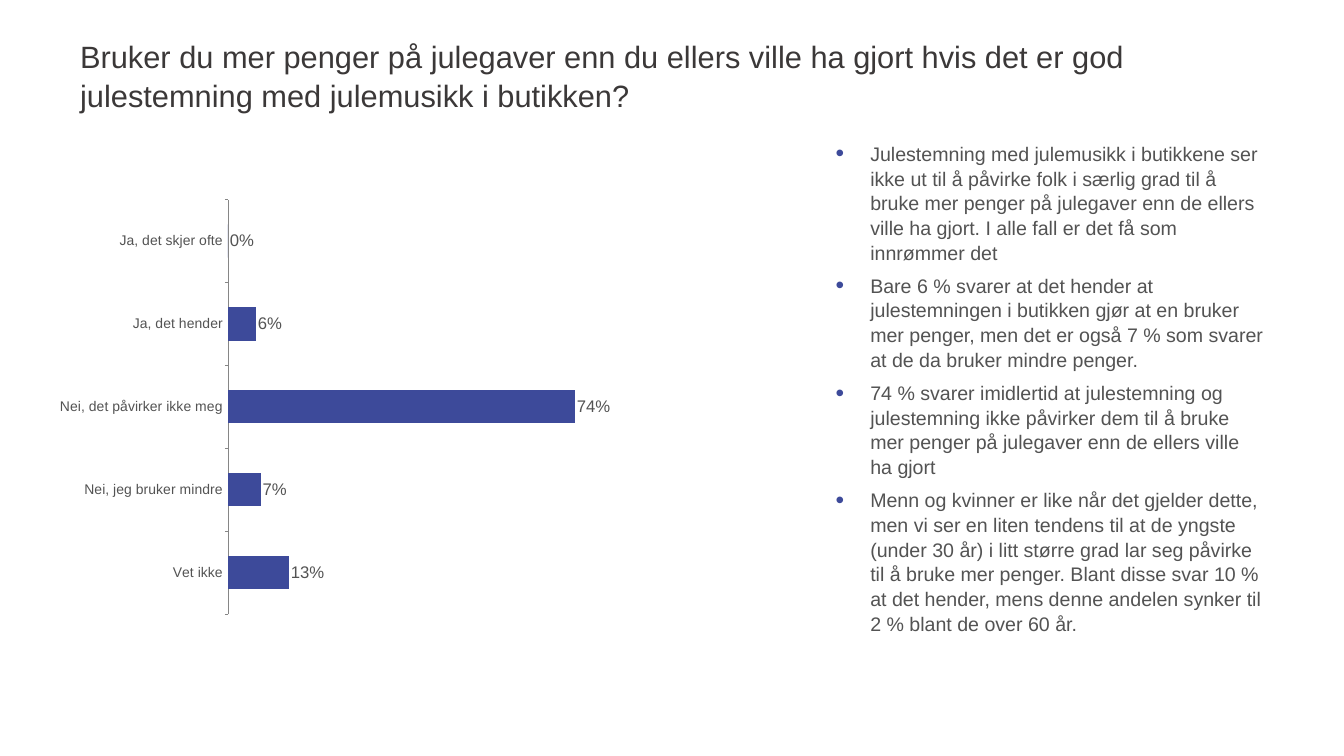
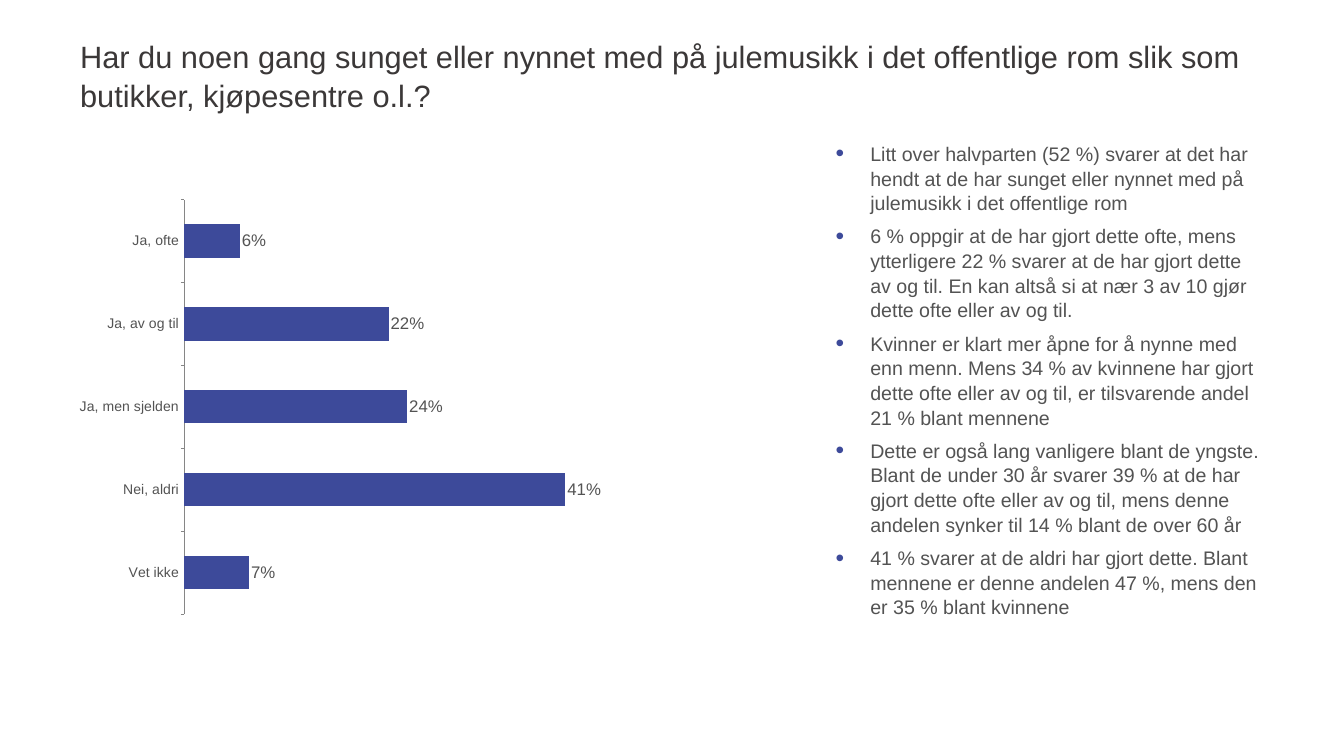
import pptx
import pptx.chart.data
import pptx.dml.color
import pptx.enum.chart
import pptx.enum.text
import pptx.oxml.ns
import pptx.util
from lxml import etree

Inches = pptx.util.Inches
Pt = pptx.util.Pt
qn = pptx.oxml.ns.qn

FONT = "Arial"
COLORS = {"title": "3B3838", "body": "535353", "accent": "3D4A9A", "axis": "868686"}
TITLE_BOX = (1.53, 0.47, 23.66, 2.04)
CHART_BOX = (1.19, 2.89, 11.77, 10.8)
BULLET_BOX = (15.82, 2.73, 9.35, 10.8)
INSET = 0.06
LINE_SPACING = 1.05

SLIDES = [
    {
        "title": "Bruker du mer penger på julegaver enn du ellers ville ha gjort "
                 "hvis det er god julestemning med julemusikk i butikken?",
        "answers": {
            "Ja, det skjer ofte": 0,
            "Ja, det hender": 0.06,
            "Nei, det påvirker ikke meg": 0.74,
            "Nei, jeg bruker mindre": 0.07,
            "Vet ikke": 0.13,
        },
        "axis_max": 0.8,
        "plot": (0.279, 0.099, 0.636, 0.762),
        "bullets": [
            "Julestemning med julemusikk i butikkene ser ikke ut til å påvirke folk i "
            "særlig grad til å bruke mer penger på julegaver enn de ellers ville ha "
            "gjort. I alle fall er det få som innrømmer det",
            "Bare 6 % svarer at det hender at julestemningen i butikken gjør at en "
            "bruker mer penger, men det er også 7 % som svarer at de da bruker mindre "
            "penger.",
            "74 % svarer imidlertid at julestemning og julestemning ikke påvirker dem "
            "til å bruke mer penger på julegaver enn de ellers ville ha gjort",
            "Menn og kvinner er like når det gjelder dette, men vi ser en liten tendens "
            "til at de yngste (under 30 år) i litt større grad lar seg påvirke til å "
            "bruke mer penger. Blant disse svar 10 % at det hender, mens denne andelen "
            "synker til 2 % blant de over 60 år.",
        ],
    },
    {
        "title": "Har du noen gang sunget eller nynnet med på julemusikk i det "
                 "offentlige rom slik som butikker, kjøpesentre o.l.?",
        "answers": {
            "Ja, ofte": 0.06,
            "Ja, av og til": 0.22,
            "Ja, men sjelden": 0.24,
            "Nei, aldri": 0.41,
            "Vet ikke": 0.07,
        },
        "axis_max": 0.45,
        "plot": (0.209, 0.099, 0.706, 0.762),
        "bullets": [
            "Litt over halvparten (52 %) svarer at det har hendt at de har sunget eller "
            "nynnet med på julemusikk i det offentlige rom",
            "6 % oppgir at de har gjort dette ofte, mens ytterligere 22 % svarer at de "
            "har gjort dette av og til. En kan altså si at nær 3 av 10 gjør dette ofte "
            "eller av og til.",
            "Kvinner er klart mer åpne for å nynne med enn menn. Mens 34 % av kvinnene "
            "har gjort dette ofte eller av og til, er tilsvarende andel 21 % blant "
            "mennene",
            "Dette er også lang vanligere blant de yngste. Blant de under 30 år svarer "
            "39 % at de har gjort dette ofte eller av og til, mens denne andelen synker "
            "til 14 % blant de over 60 år",
            "41 % svarer at de aldri har gjort dette. Blant mennene er denne andelen "
            "47 %, mens den er 35 % blant kvinnene",
        ],
    },
]


def rgb(name):
    return pptx.dml.color.RGBColor.from_string(COLORS[name])


def style_font(font, size, color):
    font.name = FONT
    font.size = Pt(size)
    font.color.rgb = rgb(color)


def add_text_frame(slide, box):
    tf = slide.shapes.add_textbox(*map(Inches, box)).text_frame
    tf.word_wrap = True
    tf.margin_left = tf.margin_right = Inches(INSET)
    tf.margin_top = tf.margin_bottom = Inches(INSET)
    return tf


def add_title(slide, box, text):
    tf = add_text_frame(slide, box)
    tf.vertical_anchor = pptx.enum.text.MSO_ANCHOR.MIDDLE
    p = tf.paragraphs[0]
    p.text = text
    p.line_spacing = LINE_SPACING
    style_font(p.runs[0].font, 44, "title")


def set_bullet(p):
    pPr = p._p.get_or_add_pPr()
    pPr.set("marL", str(Inches(1.39)))
    pPr.set("indent", str(Inches(-0.69)))
    color = etree.SubElement(pPr, qn("a:buClr"))
    etree.SubElement(color, qn("a:srgbClr"), val=COLORS["accent"])
    etree.SubElement(pPr, qn("a:buSzPct"), val="125000")
    etree.SubElement(pPr, qn("a:buFont"), typeface=FONT)
    etree.SubElement(pPr, qn("a:buChar"), char="•")


def add_bullets(slide, box, items):
    tf = add_text_frame(slide, box)
    for i, item in enumerate(items):
        p = tf.add_paragraph() if i else tf.paragraphs[0]
        p.text = item
        set_bullet(p)
        p.line_spacing = LINE_SPACING
        p.space_after = Pt(12)
        style_font(p.runs[0].font, 28, "body")


def set_plot_layout(chart, fractions):
    plot_area = chart._chartSpace.find(".//" + qn("c:plotArea"))
    for old in plot_area.findall(qn("c:layout")):
        plot_area.remove(old)
    layout = etree.Element(qn("c:layout"))
    plot_area.insert(0, layout)
    manual = etree.SubElement(layout, qn("c:manualLayout"))
    settings = [("layoutTarget", "inner"), ("xMode", "edge"), ("yMode", "edge")]
    settings += zip("xywh", fractions)
    for tag, value in settings:
        etree.SubElement(manual, qn("c:" + tag), val=str(value))


def add_answer_chart(slide, box, answers, axis_max, plot_fractions):
    data = pptx.chart.data.CategoryChartData(number_format="0%")
    data.categories = list(answers)
    data.add_series("Series 1", list(answers.values()))
    kind = pptx.enum.chart.XL_CHART_TYPE.BAR_CLUSTERED
    chart = slide.shapes.add_chart(kind, *map(Inches, box), data).chart
    chart.has_legend = False
    chart.has_title = False
    style_font(chart.font, 20, "body")

    axis = chart.category_axis
    axis.reverse_order = True
    axis.has_major_gridlines = False
    axis.major_tick_mark = pptx.enum.chart.XL_TICK_MARK.OUTSIDE
    axis.format.line.color.rgb = rgb("axis")
    axis.format.line.width = Pt(0.75)
    style_font(axis.tick_labels.font, 20, "body")

    values = chart.value_axis
    values.minimum_scale = 0
    values.maximum_scale = axis_max
    values.has_major_gridlines = False
    values.visible = False

    plot = chart.plots[0]
    plot.gap_width = 150
    plot.overlap = -20
    plot.vary_by_categories = False
    series = plot.series[0]
    series.invert_if_negative = False
    series.format.fill.solid()
    series.format.fill.fore_color.rgb = rgb("accent")
    labels = series.data_labels
    labels.show_value = True
    labels.number_format = "0%"
    labels.number_format_is_linked = False
    labels.position = pptx.enum.chart.XL_LABEL_POSITION.OUTSIDE_END
    style_font(labels.font, 24, "body")
    set_plot_layout(chart, plot_fractions)


def add_question_slide(prs, content):
    slide = prs.slides.add_slide(prs.slide_layouts[6])
    add_title(slide, TITLE_BOX, content["title"])
    add_answer_chart(slide, CHART_BOX, content["answers"],
                     content["axis_max"], content["plot"])
    add_bullets(slide, BULLET_BOX, content["bullets"])


def main():
    prs = pptx.Presentation()
    prs.slide_width = Inches(26.67)
    prs.slide_height = Inches(15)
    for content in SLIDES:
        add_question_slide(prs, content)
    prs.save("out.pptx")


if __name__ == "__main__":
    main()
